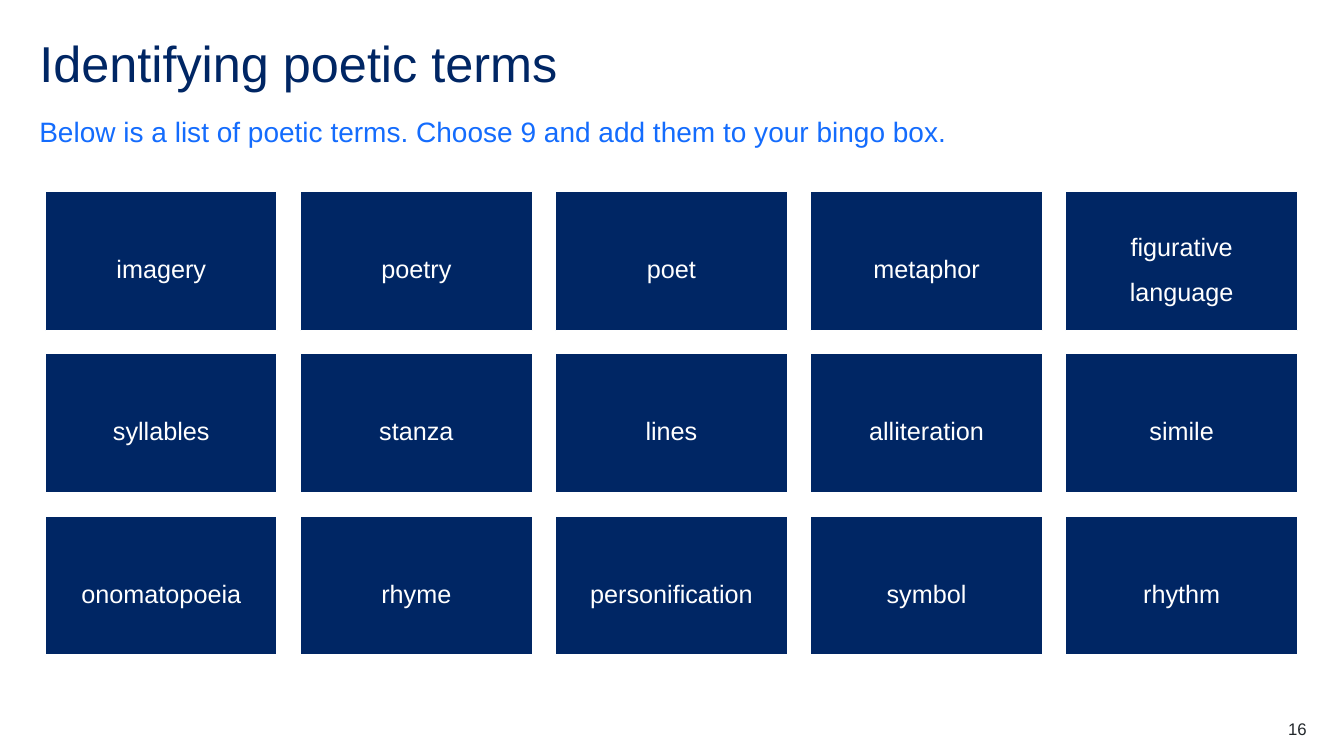
from pptx import Presentation
from pptx import util as u
from pptx.dml.color import RGBColor
from pptx.enum import shapes, text

NAVY, BLUE, WHITE, CHARCOAL = "002664", "146CFD", "FFFFFF", "22272B"
MARGIN, CONTENT_WIDTH = 0.39, 12.56
GRID_LEFT, GRID_TOP = 0.45, 1.9
CARD_WIDTH, CARD_HEIGHT, GAP = 2.3, 1.38, 0.23
TERMS = [
    ["imagery", "poetry", "poet", "metaphor", "figurative language"],
    ["syllables", "stanza", "lines", "alliteration", "simile"],
    ["onomatopoeia", "rhyme", "personification", "symbol", "rhythm"],
]


def colour(hex_value):
    return RGBColor.from_string(hex_value)


def inches(*lengths):
    return [u.Inches(length) for length in lengths]


def write(shape, words, size, ink, align=text.PP_ALIGN.LEFT,
          anchor=text.MSO_ANCHOR.TOP, spacing=1.0, inset=0):
    frame = shape.text_frame
    frame.word_wrap = True
    frame.auto_size = text.MSO_AUTO_SIZE.NONE
    frame.vertical_anchor = anchor
    frame.margin_left = frame.margin_right = u.Inches(inset)
    frame.margin_top = frame.margin_bottom = u.Inches(inset)
    paragraph = frame.paragraphs[0]
    paragraph.alignment = align
    paragraph.line_spacing = spacing
    run = paragraph.add_run()
    run.text = words
    run.font.name = "Arial"
    run.font.size = u.Pt(size)
    run.font.color.rgb = colour(ink)


def add_title(slide, words):
    title = slide.shapes.title
    title.left, title.top, title.width, title.height = inches(
        MARGIN, MARGIN, CONTENT_WIDTH, 0.6)
    write(title, words, 36, NAVY, spacing=0.9)


def add_label(slide, box, words, size, ink, **layout):
    write(slide.shapes.add_textbox(*inches(*box)), words, size, ink, **layout)


def add_term_card(slide, column, row, term):
    left = GRID_LEFT + column * (CARD_WIDTH + GAP)
    top = GRID_TOP + row * (CARD_HEIGHT + GAP)
    card = slide.shapes.add_shape(
        shapes.MSO_SHAPE.RECTANGLE, *inches(left, top, CARD_WIDTH, CARD_HEIGHT))
    card.shadow.inherit = False
    card.fill.solid()
    card.fill.fore_color.rgb = colour(NAVY)
    card.line.color.rgb = colour(WHITE)
    card.line.width = u.Pt(1)
    write(card, term, 18, WHITE, align=text.PP_ALIGN.CENTER,
          anchor=text.MSO_ANCHOR.MIDDLE, spacing=1.5, inset=0.11)


def main():
    deck = Presentation()
    deck.slide_width, deck.slide_height = inches(13.33, 7.5)
    slide = deck.slides.add_slide(deck.slide_layouts.get_by_name("Title Only"))
    add_title(slide, "Identifying poetic terms")
    add_label(slide, (MARGIN, 1.13, CONTENT_WIDTH, 0.34),
              "Below is a list of poetic terms. Choose 9 and add them to your bingo box.",
              20, BLUE, anchor=text.MSO_ANCHOR.BOTTOM, spacing=1.5)
    for row, terms in enumerate(TERMS):
        for column, term in enumerate(terms):
            add_term_card(slide, column, row, term)
    add_label(slide, (12.17, 7.13, 0.79, 0.2), "16", 12, CHARCOAL,
              align=text.PP_ALIGN.RIGHT)
    deck.save("out.pptx")


if __name__ == "__main__":
    main()
